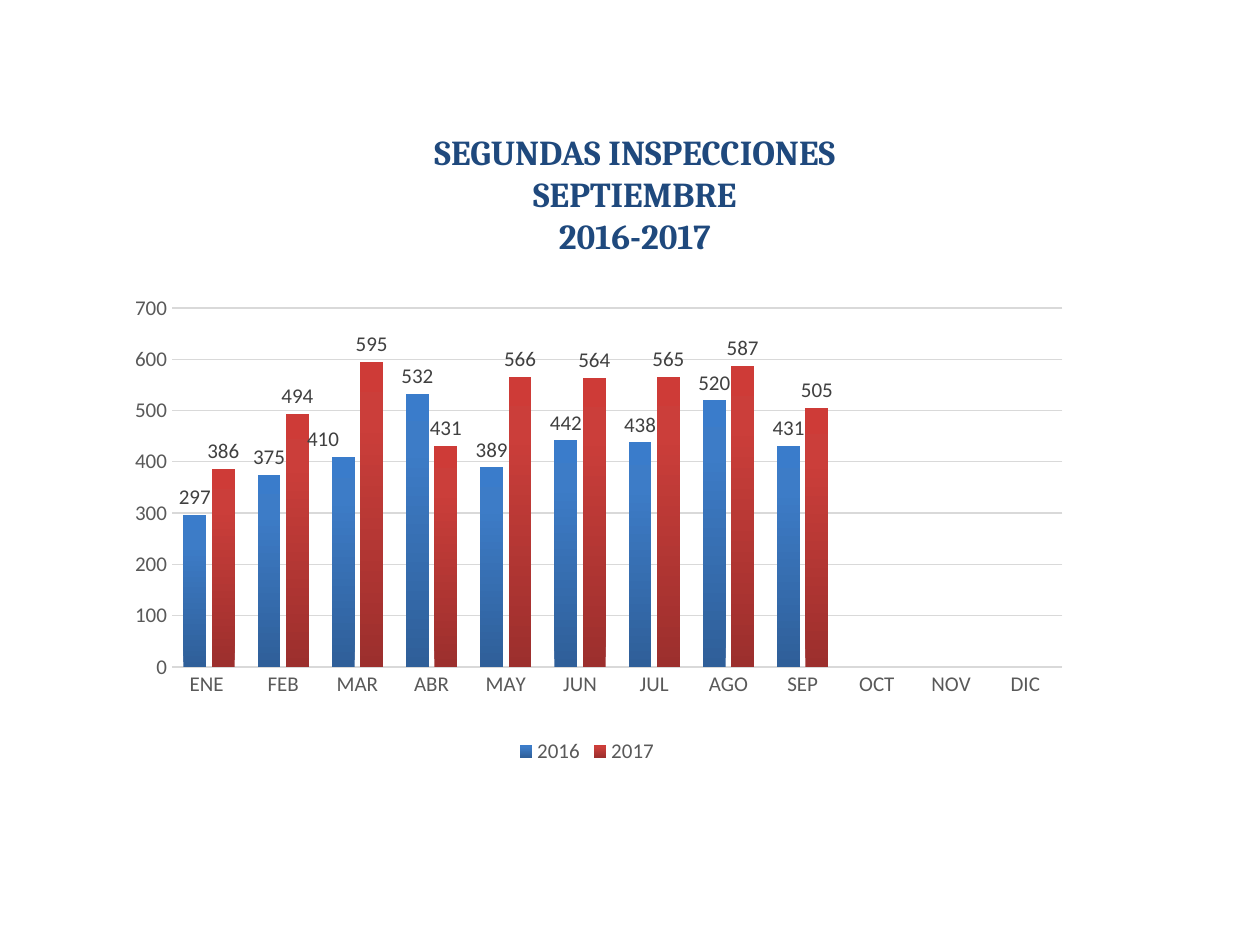
import lxml.etree
import pptx
import pptx.chart.data
import pptx.dml.color
import pptx.enum.chart
import pptx.enum.text
import pptx.oxml
import pptx.oxml.ns
import pptx.util

Cm, Pt = pptx.util.Cm, pptx.util.Pt
enum = pptx.enum.chart
qn = pptx.oxml.ns.qn

TITLE = ["SEGUNDAS INSPECCIONES", "SEPTIEMBRE", "2016-2017"]
MONTHS = ["ENE ", "FEB", "MAR", "ABR", "MAY", "JUN",
          "JUL", "AGO", "SEP", "OCT", "NOV", "DIC"]
YEARS = {
    "2016": [297, 375, 410, 532, 389, 442, 438, 520, 431],
    "2017": [386, 494, 595, 431, 566, 564, 565, 587, 505],
}
FADES = {
    "2016": {0: "2F5F99", 80: "3D7CC7", 100: "3A7CCB"},
    "2017": {0: "9C2F2D", 80: "CB3E3A", 100: "CE3B37"},
}
GREY, RULE = "595959", "D9D9D9"


def color(code):
    return pptx.dml.color.RGBColor.from_string(code)


def style(item, **vals):
    for name, val in vals.items():
        setattr(item, name, val)


def set_font(font, code, size=12, name="Calibri", bold=False):
    style(font, size=Pt(size), name=name, bold=bold)
    font.color.rgb = color(code)


def set_line(line, code, width):
    line.color.rgb = color(code)
    line.width = Pt(width)


def add_layout(**vals):
    """Make a manual layout element for a chart part."""
    layout = pptx.oxml.parse_xml(
        f'<c:layout {pptx.oxml.ns.nsdecls("c")}><c:manualLayout/></c:layout>')
    for name, val in vals.items():
        lxml.etree.SubElement(layout[0], qn("c:" + name)).set("val", str(val))
    return layout


def fade(fill, stops):
    """Fill from bottom to top through the given stops."""
    fill.gradient()
    fill.gradient_angle = 90
    node = fill._xPr.find(qn("a:gradFill"))
    group = node.find(qn("a:gsLst"))
    for old in list(group):
        group.remove(old)
    for pos, code in stops.items():
        stop = lxml.etree.SubElement(group, qn("a:gs"), pos=str(pos * 1000))
        lxml.etree.SubElement(stop, qn("a:srgbClr"), val=code)


def add_title(slide, left, top, width, height):
    frame = slide.shapes.add_textbox(left, top, width, height).text_frame
    style(frame, word_wrap=True,
          auto_size=pptx.enum.text.MSO_AUTO_SIZE.SHAPE_TO_FIT_TEXT)
    for i, line in enumerate(TITLE):
        para = frame.add_paragraph() if i else frame.paragraphs[0]
        para.alignment = pptx.enum.text.PP_ALIGN.CENTER
        run = para.add_run()
        run.text = line
        set_font(run.font, "1F497D", 20, "Cambria", True)


def add_bars(slide, left, top, width, height):
    data = pptx.chart.data.CategoryChartData()
    data.categories = MONTHS
    for year, vals in YEARS.items():
        data.add_series(year, vals + [None] * (len(MONTHS) - len(vals)))
    chart = slide.shapes.add_chart(
        enum.XL_CHART_TYPE.COLUMN_CLUSTERED,
        left, top, width, height, data).chart
    style(chart, has_title=False, has_legend=True)
    set_font(chart.font, "000000", 10)

    # Legend
    style(chart.legend, position=enum.XL_LEGEND_POSITION.BOTTOM,
          include_in_layout=False)
    set_font(chart.legend.font, GREY)

    # Axes
    months, count = chart.category_axis, chart.value_axis
    for axis in (months, count):
        style(axis, major_tick_mark=enum.XL_TICK_MARK.NONE,
              minor_tick_mark=enum.XL_TICK_MARK.NONE)
        set_font(axis.tick_labels.font, GREY)
    set_line(months.format.line, RULE, 1)
    style(count, minimum_scale=0, maximum_scale=700, major_unit=100,
          has_major_gridlines=True)
    count.format.line.fill.background()
    set_line(count.major_gridlines.format.line, RULE, 0.75)

    # Bars and their labels
    plot = chart.plots[0]
    style(plot, gap_width=100, overlap=-24, vary_by_categories=False)
    for bars in plot.series:
        fade(bars.format.fill, FADES[bars.name])
        bars.invert_if_negative = False
        labels = bars.data_labels
        style(labels, show_value=True,
              position=enum.XL_LABEL_POSITION.OUTSIDE_END)
        set_font(labels.font, "404040")

    # The March 2016 label sits a little to the left
    march = plot.series[0].points[2].data_label
    set_font(march.font, "404040")
    march.position = enum.XL_LABEL_POSITION.OUTSIDE_END
    node = plot.series[0]._element.find(".//" + qn("c:dLbl"))
    node.insert(1, add_layout(x=-0.02, y=0))

    # Plot area
    area = chart._chartSpace.find(".//" + qn("c:plotArea"))
    for old in area.findall(qn("c:layout")):
        area.remove(old)
    area.insert(0, add_layout(layoutTarget="inner", xMode="edge", yMode="edge",
                              x=0.09, y=0.05, w=0.88, h=0.74))


def main():
    deck = pptx.Presentation()
    style(deck, slide_width=Cm(25.4), slide_height=Cm(19.05))
    slide = deck.slides.add_slide(deck.slide_layouts[6])
    add_title(slide, Cm(3.5), Cm(2.5), Cm(18.6), Cm(2.82))
    add_bars(slide, Cm(1.63), Cm(5.72), Cm(20.4), Cm(9.78))
    deck.save("out.pptx")


if __name__ == "__main__":
    main()
